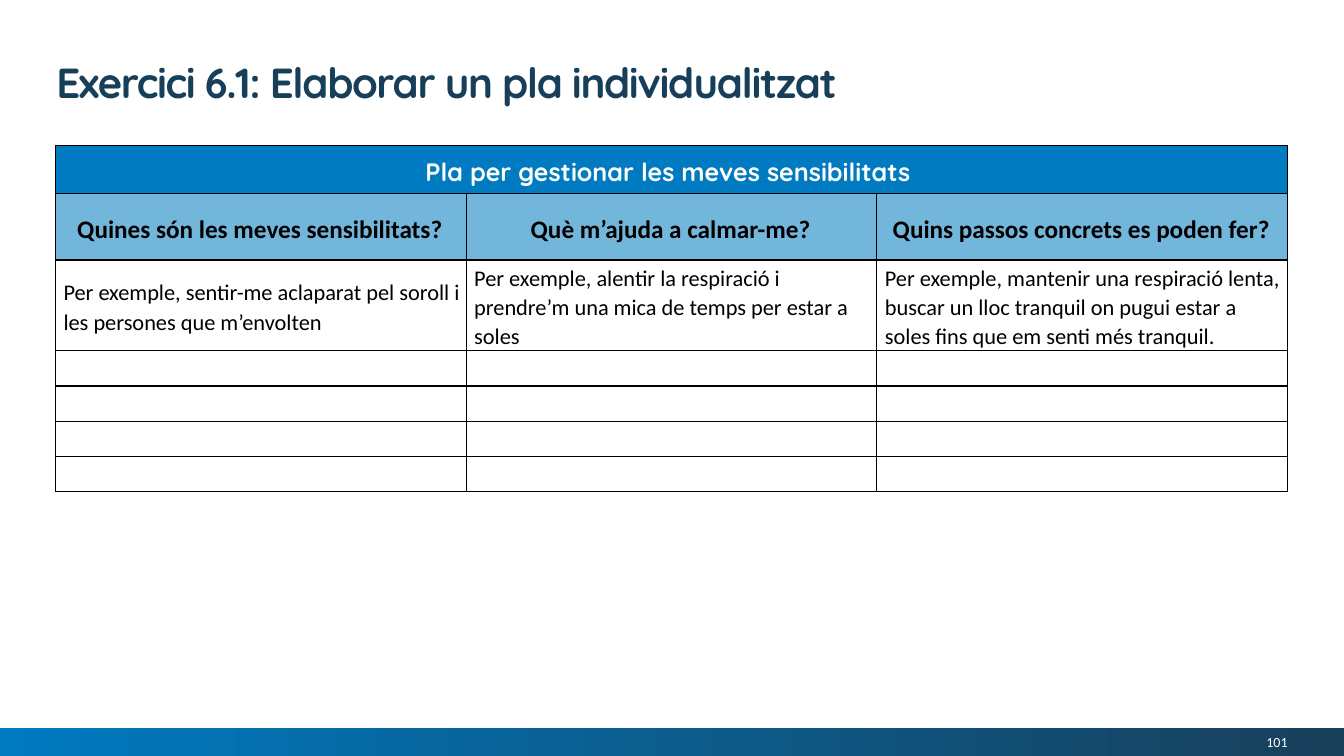
import pptx
import pptx.util
import pptx.dml.color
import pptx.enum.shapes
import pptx.enum.text
import pptx.oxml

ALIGN = pptx.enum.text.PP_ALIGN
MIDDLE = pptx.enum.text.MSO_ANCHOR.MIDDLE
WIDE, HIGH = 13.33, 7.5

HEADS = ["Quines són les meves sensibilitats? ",
         "Què m’ajuda a calmar-me? ",
         "Quins passos concrets es poden fer? "]
HINTS = ["Per exemple, sentir-me aclaparat pel soroll i les persones que m’envolten",
         "Per exemple, alentir la respiració i prendre’m una mica de temps per estar a soles",
         "Per exemple, mantenir una respiració lenta, buscar un lloc tranquil on pugui "
         "estar a soles fins que em senti més tranquil."]
BLANKS = 4


def color(code):
    return pptx.dml.color.RGBColor.from_string(code)


class Board:
    navy, blue, sky = "183F5A", "007AC0", "73B6DC"
    white, black = "FFFFFF", "000000"
    title, body = "Quicksand", "Calibri"

    def __init__(self, deck):
        self.deck = deck
        self.slide = deck.slides.add_slide(deck.slide_layouts[6])

    def place(self, left, top, width, height):
        """Turn shares of the slide's size into lengths."""
        w, h = self.deck.slide_width, self.deck.slide_height
        return [int(n) for n in (left * w, top * h, width * w, height * h)]

    def label(self, frame, text, font, size, tint, bold=False, align=ALIGN.LEFT):
        frame.text = text
        frame.word_wrap = True
        para = frame.paragraphs[0]
        para.alignment = align
        run = para.runs[0]
        run.font.name, run.font.bold = font, bold
        run.font.size = pptx.util.Pt(size)
        run.font.color.rgb = color(tint)
        return para

    def inset(self, item, left, top, right, bottom):
        item.margin_left, item.margin_top, item.margin_right, item.margin_bottom = (
            pptx.util.Inches(n) for n in (left, top, right, bottom))

    def band(self, *spot):
        rect = pptx.enum.shapes.MSO_SHAPE.RECTANGLE
        bar = self.slide.shapes.add_shape(rect, *self.place(*spot))
        bar.shadow.inherit = False
        bar.line.fill.background()
        bar.fill.gradient()
        bar.fill.gradient_angle = 0
        for stop, place, code in zip(bar.fill.gradient_stops, (0, 1), (self.blue, self.navy)):
            stop.position = place
            stop.color.rgb = color(code)

    def head(self, text, *spot):
        box = self.slide.shapes.add_textbox(*self.place(*spot))
        para = self.label(box.text_frame, text, self.title, 30, self.navy, True)
        para.line_spacing = pptx.util.Pt(33)
        para.runs[0].font._element.set("spc", "-100")

    def number(self, text, *spot):
        frame = self.slide.shapes.add_textbox(*self.place(*spot)).text_frame
        self.inset(frame, 0, 0, 0, 0)
        frame.vertical_anchor = MIDDLE
        self.label(frame, text, self.body, 10, self.white, align=ALIGN.RIGHT)

    def border(self, cell):
        props = cell._tc.get_or_add_tcPr()
        space = "http://schemas.openxmlformats.org/drawingml/2006/main"
        for spot, side in enumerate("LRTB"):
            props.insert(spot, pptx.oxml.parse_xml(
                f'<a:ln{side} xmlns:a="{space}" w="12700"><a:solidFill>'
                f'<a:srgbClr val="{self.black}"/></a:solidFill></a:ln{side}>'))

    def table(self, rows, *spot):
        """Draw a grid of (height, cells) rows."""
        grid = self.slide.shapes.add_table(len(rows), 3, *self.place(*spot)).table
        grid.first_row = grid.horz_banding = False
        for r, (height, cells) in enumerate(rows):
            grid.rows[r].height = pptx.util.Inches(height)
            for c, text in enumerate(cells):
                cell = grid.cell(r, c)
                cell.vertical_anchor = MIDDLE
                self.inset(cell, 0.08, 0.03, 0.04, 0)
                self.border(cell)
                if r < 2:
                    cell.fill.solid()
                    cell.fill.fore_color.rgb = color((self.blue, self.sky)[r])
                else:
                    cell.fill.background()
                if text:
                    self.fill(cell, r, text)
        grid.cell(0, 0).merge(grid.cell(0, 2))

    def fill(self, cell, row, text):
        """Set a cell's text in the style of its row."""
        font, size, tint, bold, align, gap = [
            (self.title, 18, self.white, True, ALIGN.CENTER, 1.15),
            (self.body, 18, self.black, True, ALIGN.CENTER, 1.07),
            (self.body, 16, self.black, False, ALIGN.LEFT, 1.07)][row]
        para = self.label(cell.text_frame, text, font, size, tint, bold, align)
        para.line_spacing = gap
        if row:
            para.space_after = pptx.util.Pt(8)
        else:
            self.inset(cell, 0.1, 0, 0.1, 0)


def main():
    deck = pptx.Presentation()
    deck.slide_width = pptx.util.Inches(WIDE)
    deck.slide_height = pptx.util.Inches(HIGH)
    board = Board(deck)
    foot, edge = 7.22 / HIGH, 0.55 / WIDE
    board.band(0, foot, 1, 1 - foot)
    board.number("101", 10.97 / WIDE, 7.24 / HIGH, 1.8 / WIDE, 0.24 / HIGH)
    rows = [(0.48, ["Pla per gestionar les meves sensibilitats ", "", ""]),
            (0.66, HEADS), (0.9, HINTS)] + [(0.35, [""] * 3)] * BLANKS
    tall = sum(height for height, _ in rows)
    board.table(rows, edge, 1.44 / HIGH, 12.22 / WIDE, tall / HIGH)
    board.head("Exercici 6.1: Elaborar un pla individualitzat",
               0.46 / WIDE, 0.55 / HIGH, 10.71 / WIDE, 0.47 / HIGH)
    deck.save("out.pptx")


if __name__ == "__main__":
    main()
